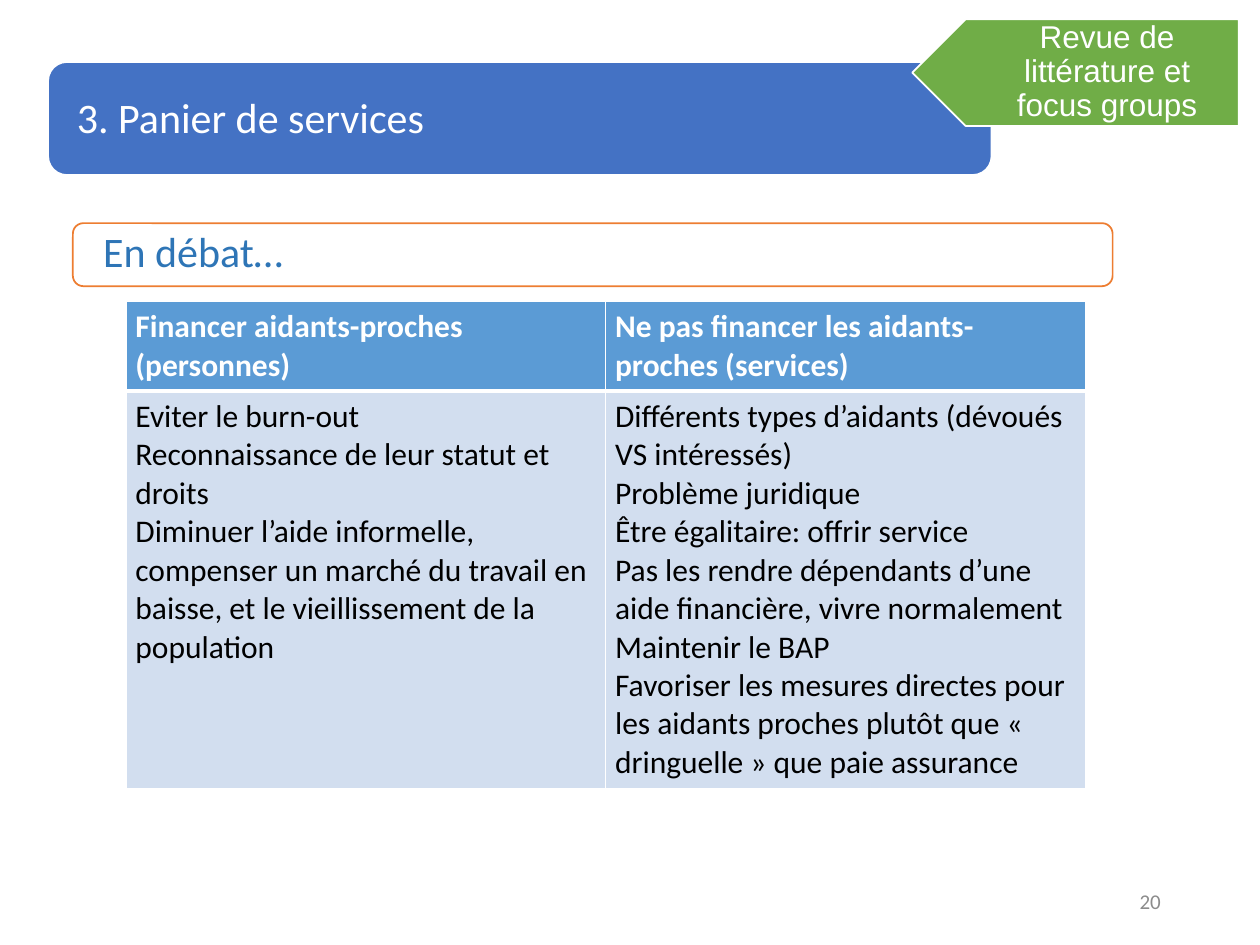
"""Build the slide on the service basket and the debate on paying carers."""
from dataclasses import dataclass, field

from lxml import etree
from pptx import Presentation
from pptx.dml.color import RGBColor
from pptx.enum.shapes import MSO_SHAPE
from pptx.enum.text import MSO_ANCHOR, PP_ALIGN
from pptx.oxml.ns import qn
from pptx.util import Cm, Pt

ROUNDED = MSO_SHAPE.ROUNDED_RECTANGLE
PENTAGON = MSO_SHAPE.PENTAGON
MIDDLE = MSO_ANCHOR.MIDDLE
LEFT, CENTER, RIGHT = PP_ALIGN.LEFT, PP_ALIGN.CENTER, PP_ALIGN.RIGHT
WHITE, BLACK = "FFFFFF", "000000"


@dataclass
class Panel:
    """A filled or outlined shape, in centimetres."""
    kind: int
    box: tuple
    line: str
    fill: str | None = None
    rotation: int = 0


@dataclass
class Label:
    """A line of text in its own box, in centimetres."""
    text: str
    box: tuple
    size: int
    color: str
    font: str = "Calibri"
    align: int = LEFT
    insets: tuple = (0.25, 0, 0.25, 0)
    spacing: dict = field(default_factory=lambda: {"line_spacing": 0.9})


@dataclass
class TableRow:
    """One table row: its cell texts, height and look."""
    cells: tuple
    height: float
    fill: str
    color: str
    bold: bool
    top: int
    bottom: int


PANELS = [
    Panel(ROUNDED, (0.97, 1.25, 19.02, 2.28), WHITE, "4472C4"),
    Panel(PENTAGON, (18.39, 0.39, 6.58, 2.15), WHITE, "70AD47", 180),
    Panel(ROUNDED, (1.47, 4.5, 20.96, 1.27), "ED7D31"),
]
LABELS = [
    Label("3. Panier de services", (1.3, 1.37, 18.36, 2.08), 24, WHITE),
    Label("Revue de littérature et focus groups", (18.78, 0.39, 6.17, 2.15), 18, WHITE,
          "Arial", CENTER, (1.57, 0.36, 0.66, 0.36)),
    Label("En débat…", (1.83, 4.54, 20.24, 1.14), 24, "2E75B6"),
    Label("20", (17.93, 17.65, 5.72, 1.02), 12, "8C8C8C",
          align=RIGHT, insets=(0.25, 0.13, 0.25, 0.13), spacing={}),
]
ROWS = [
    TableRow((["Financer aidants-proches (personnes)"],
              ["Ne pas financer les aidants-proches (services)"]),
             1.78, "5B9BD5", WHITE, True, 1, 3),
    TableRow((["Eviter le burn-out",
               "Reconnaissance de leur statut et droits",
               "Diminuer l’aide informelle, compenser un marché du travail en baisse, "
               "et le vieillissement de la population"],
              ["Différents types d’aidants (dévoués VS intéressés)",
               "Problème juridique",
               "Être égalitaire: offrir service",
               "Pas les rendre dépendants d’une aide financière, vivre normalement",
               "Maintenir le BAP",
               "Favoriser les mesures directes pour les aidants proches plutôt que "
               "« dringuelle » que paie assurance"]),
             7.87, "D2DEEF", BLACK, False, 3, 1),
]
TABLE_LEFT, TABLE_TOP, COLUMN_WIDTH = 2.54, 6.07, 9.67


def rgb(color: str) -> RGBColor:
    """Turn a hex string into a colour."""
    return RGBColor.from_string(color)


def apply(target, values: dict) -> None:
    """Set every attribute named in the dict."""
    for name, value in values.items():
        setattr(target, name, value)


def set_insets(target, insets: tuple) -> None:
    """Set left, top, right and bottom margins in centimetres."""
    sides = ("left", "top", "right", "bottom")
    apply(target, {f"margin_{side}": Cm(inset) for side, inset in zip(sides, insets)})


def write(paragraph, text: str, color: str, values: dict) -> None:
    """Add one formatted run to a paragraph."""
    run = paragraph.add_run()
    run.text = text
    apply(run.font, values)
    run.font.color.rgb = rgb(color)


def draw_panel(slide, panel: Panel) -> None:
    """Draw one preset shape."""
    shape = slide.shapes.add_shape(panel.kind, *map(Cm, panel.box))
    shape.shadow.inherit = False
    shape.rotation = panel.rotation
    if panel.fill:
        shape.fill.solid()
        shape.fill.fore_color.rgb = rgb(panel.fill)
    else:
        shape.fill.background()
    shape.line.color.rgb = rgb(panel.line)
    shape.line.width = Pt(1)


def draw_label(slide, label: Label) -> None:
    """Draw one text box."""
    frame = slide.shapes.add_textbox(*map(Cm, label.box)).text_frame
    apply(frame, {"word_wrap": True, "vertical_anchor": MIDDLE})
    set_insets(frame, label.insets)
    paragraph = frame.paragraphs[0]
    apply(paragraph, {"alignment": label.align, **label.spacing})
    write(paragraph, label.text, label.color, {"size": Pt(label.size), "name": label.font})


def set_borders(cell, top: int, bottom: int) -> None:
    """Give a cell white borders, with widths in points."""
    properties = cell._tc.get_or_add_tcPr()
    widths = {"a:lnL": 1, "a:lnR": 1, "a:lnT": top, "a:lnB": bottom}
    for position, (tag, width) in enumerate(widths.items()):
        line = etree.Element(qn(tag), w=str(Pt(width)))
        fill = etree.SubElement(line, qn("a:solidFill"))
        etree.SubElement(fill, qn("a:srgbClr"), val=WHITE)
        properties.insert(position, line)


def draw_table(slide, rows: list[TableRow]) -> None:
    """Draw the table of arguments."""
    count = len(rows[0].cells)
    height = sum(row.height for row in rows)
    table = slide.shapes.add_table(len(rows), count, Cm(TABLE_LEFT), Cm(TABLE_TOP),
                                   Cm(COLUMN_WIDTH * count), Cm(height)).table
    for row_index, row in enumerate(rows):
        table.rows[row_index].height = Cm(row.height)
        for column_index, lines in enumerate(row.cells):
            cell = table.cell(row_index, column_index)
            cell.fill.solid()
            cell.fill.fore_color.rgb = rgb(row.fill)
            set_insets(cell, (0.19, 0.13, 0.19, 0.13))
            set_borders(cell, row.top, row.bottom)
            frame = cell.text_frame
            for line_index, line in enumerate(lines):
                paragraph = frame.add_paragraph() if line_index else frame.paragraphs[0]
                write(paragraph, line, row.color,
                      {"size": Pt(18), "name": "Calibri", "bold": row.bold})


def main() -> None:
    """Build and save the presentation."""
    presentation = Presentation()
    apply(presentation, {"slide_width": Cm(25.4), "slide_height": Cm(19.05)})
    slide = presentation.slides.add_slide(presentation.slide_layouts[6])
    draw_table(slide, ROWS)
    for panel in PANELS:
        draw_panel(slide, panel)
    for label in LABELS:
        draw_label(slide, label)
    presentation.save("out.pptx")


if __name__ == "__main__":
    main()
